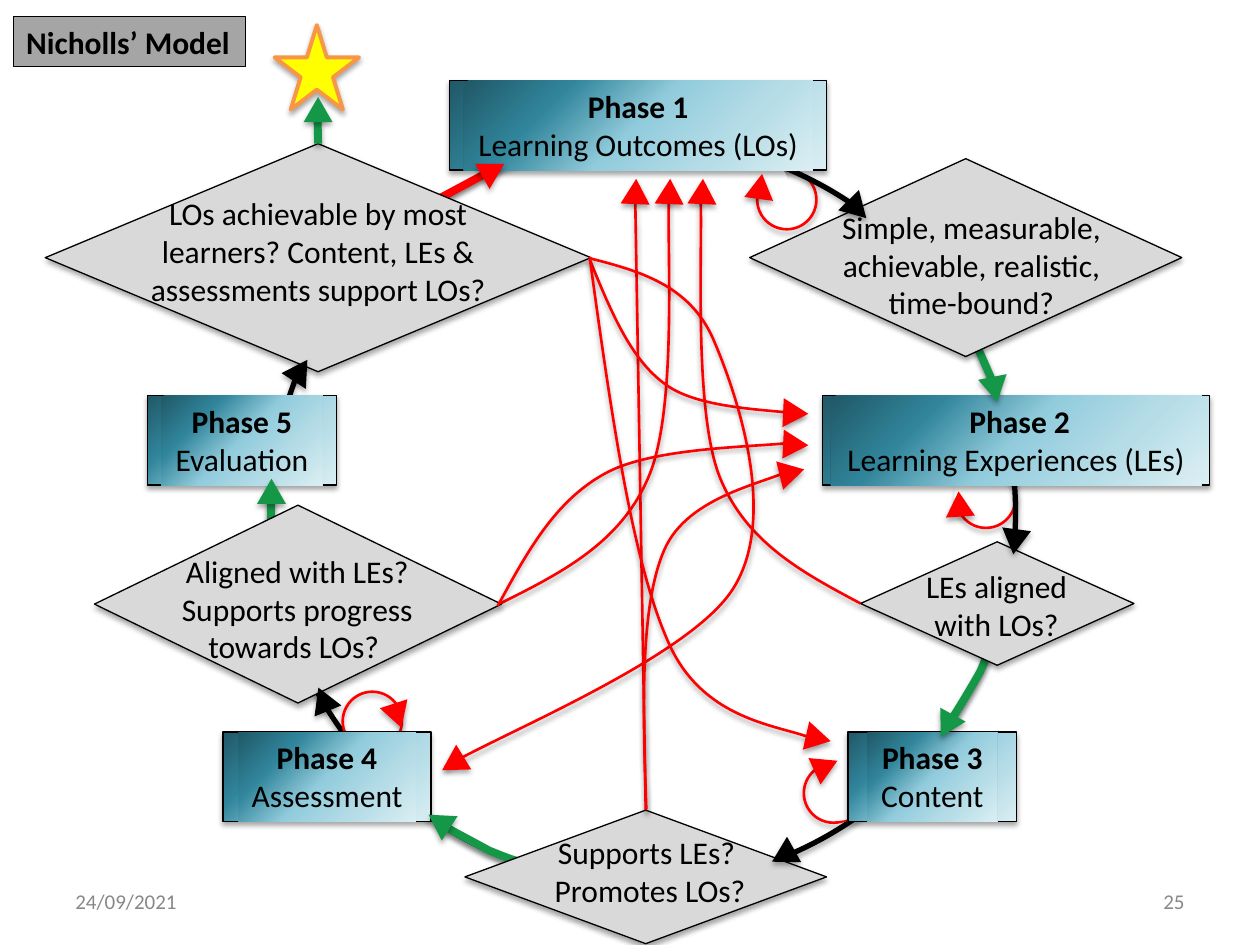
from dataclasses import dataclass
from lxml.etree import SubElement
from pptx import Presentation
from pptx.dml.color import RGBColor
from pptx.enum.shapes import MSO_CONNECTOR, MSO_SHAPE
from pptx.enum.text import MSO_ANCHOR, PP_ALIGN
from pptx.oxml.ns import qn
from pptx.util import Inches, Pt


@dataclass(frozen=True)
class Theme:
    font: str = "Calibri"
    body: int = 18
    foot: int = 12
    black: str = "000000"
    white: str = "FFFFFF"
    red: str = "FF0000"
    green: str = "159748"
    gray: str = "D9D9D9"
    dark: str = "A5A5A5"
    muted: str = "888888"
    star: str = "FFFF00"
    orange: str = "F79646"
    fade: tuple = ("DAEEF3", "B6DDE7", "92CCDC", "31859B", "205867")
    thin: float = 0.75
    curve: float = 1.5
    thick: float = 4.5


T = Theme()


def dress(item, fill=None, line=None, width=T.thin, shade=True):
    """Set fill (a colour, a tuple of gradient colours or None), line and shadow."""
    props = item._element.spPr
    if isinstance(fill, tuple):
        item.fill.background()
        blank = props.find(qn("a:noFill"))
        grad = SubElement(props, qn("a:gradFill"), rotWithShape="1")
        props.replace(blank, grad)
        stops = SubElement(grad, qn("a:gsLst"))
        for i, tone in enumerate(fill):
            stop = SubElement(stops, qn("a:gs"), pos=str(i * 25000))
            SubElement(stop, qn("a:srgbClr"), val=tone)
        way = SubElement(grad, qn("a:path"))
        way.set("path", "circle")
        SubElement(way, qn("a:fillToRect"), l="100000", t="100000")
    elif fill:
        item.fill.solid()
        item.fill.fore_color.rgb = RGBColor.from_string(fill)
    elif hasattr(item, "fill"):
        item.fill.background()
    if line:
        item.line.color.rgb = RGBColor.from_string(line)
        item.line.width = Pt(width)
    else:
        item.line.fill.background()
    effects = SubElement(props, qn("a:effectLst"))
    if shade:
        cast = SubElement(effects, qn("a:outerShdw"), blurRad=str(Pt(3.1)),
                          dist=str(Pt(1.8)), dir="5400000", rotWithShape="0")
        tone = SubElement(cast, qn("a:srgbClr"), val=T.black)
        SubElement(tone, qn("a:alpha"), val="35000")


def write(item, lines, align=PP_ALIGN.CENTER, size=T.body, tone=T.black,
          bold=False, wrap=True, anchor=MSO_ANCHOR.TOP):
    """Write one paragraph a line; bold applies to the first."""
    frame = item.text_frame
    frame.word_wrap = wrap
    frame.vertical_anchor = anchor
    for i, words in enumerate(lines):
        para = frame.add_paragraph() if i else frame.paragraphs[0]
        para.alignment = align
        run = para.add_run()
        run.text = words
        run.font.name = T.font
        run.font.size = Pt(size)
        run.font.bold = bold and i == 0
        run.font.color.rgb = RGBColor.from_string(tone)


deck = Presentation()
deck.slide_width, deck.slide_height = Inches(10), Inches(7.5)
shapes = deck.slides.add_slide(deck.slide_layouts[6]).shapes

# Date and page number
for left, words, align in [(0.5, "24/09/2021", PP_ALIGN.LEFT), (7.17, "25", PP_ALIGN.RIGHT)]:
    box = shapes.add_textbox(Inches(left), Inches(6.95), Inches(2.33), Inches(0.4))
    write(box, [words], align, T.foot, T.muted, anchor=MSO_ANCHOR.MIDDLE)

# Small loops and the main ring, partly hidden by white chords
for left, top, size, tone, width in [
    (7.59, 3.72, 0.47, T.red, T.curve), (6.01, 1.35, 0.47, T.red, T.curve),
    (2.15, 1.11, 5.91, T.black, 3),
    (2.72, 5.49, 0.47, T.red, T.curve), (6.38, 6.06, 0.47, T.red, T.curve),
]:
    ring = shapes.add_shape(MSO_SHAPE.OVAL, Inches(left), Inches(top), Inches(size), Inches(size))
    dress(ring, None, tone, width)
for left, top, wide, turn, end in [
    (6.39, 6.01, 0.58, 277.3, 4.46), (7.53, 3.65, 0.42, 136.9, 4.46), (5.83, 1.25, 0.42, 112.1, 162),
]:
    mask = shapes.add_shape(MSO_SHAPE.CHORD, Inches(left), Inches(top), Inches(wide), Inches(0.43))
    mask.rotation = turn
    mask.adjustments[0], mask.adjustments[1] = 52.95, end
    dress(mask, T.white, shade=False)

# Straight links that run under the diamonds
for x1, y1, x2, y2, tone in [
    (3.44, 1.6, 3.85, 1.38, T.red), (2.15, 4.17, 2.15, 3.95, T.green), (7.76, 2.76, 7.87, 3.01, T.green),
]:
    link = shapes.add_connector(MSO_CONNECTOR.STRAIGHT, Inches(x1), Inches(y1), Inches(x2), Inches(y2))
    dress(link, None, tone, T.thick)

# Decision diamonds, each with its text box
gates = []
for (left, top, wide, high), (tx, ty, tw, th), lines in [
    ((6.83, 4.3, 2.17, 0.98), (7.08, 4.45, 1.66, 0.71), ["LEs aligned with LOs?"]),
    ((3.69, 6.43, 2.87, 1.06), (4.18, 6.56, 1.96, 0.71), ["Supports LEs? ", "Promotes LOs?"]),
    ((5.95, 1.26, 3.43, 1.57), (6.32, 1.6, 2.78, 1.01),
     ["Simple, measurable, achievable, realistic, time-bound?"]),
    ((0.75, 4.01, 3.23, 1.57), (0.96, 4.33, 2.8, 0.98),
     ["Aligned with LEs?", "Supports progress towards LOs? "]),
    ((0.36, 1.14, 4.33, 1.81), (0.84, 1.49, 3.37, 1.01),
     ["LOs achievable by most learners? Content, LEs & assessments support LOs?"]),
]:
    gate = shapes.add_shape(MSO_SHAPE.FLOWCHART_DECISION, Inches(left), Inches(top), Inches(wide), Inches(high))
    dress(gate, T.gray, T.black)
    gates.append(gate)
    write(shapes.add_textbox(Inches(tx), Inches(ty), Inches(tw), Inches(th)), lines)

star = shapes.add_shape(MSO_SHAPE.STAR_5_POINT, Inches(2.18), Inches(0.2), Inches(0.67), Inches(0.67))
dress(star, T.star, T.orange, 2.25)

# Phases: a framed box with a narrower label box centred on it
for left, top, wide, inner, head, words in [
    (1.17, 3.14, 1.5, 1.28, "Phase 5", "Evaluation"),
    (1.77, 5.81, 1.65, 1.41, "Phase 4", "Assessment"),
    (6.73, 5.81, 1.34, 1.03, "Phase 3", "Content"),
    (6.53, 3.14, 3.07, 2.94, " Phase 2", "Learning Experiences (LEs)"),
    (3.57, 0.64, 2.99, 2.77, "Phase 1", "Learning Outcomes (LOs)"),
]:
    for span, line in [(wide, T.black), (inner, None)]:
        box = shapes.add_shape(MSO_SHAPE.RECTANGLE, Inches(left + (wide - span) / 2), Inches(top),
                               Inches(span), Inches(0.71))
        dress(box, T.fade, line, shade=bool(line))
    write(box, [head, words], bold=True, wrap=False)

# Links that leave the top of a diamond
for gate, x, y, tone, width in [(gates[4], 2.52, 0.91, T.green, T.thick), (gates[1], 5.04, 1.48, T.red, T.curve)]:
    link = shapes.add_connector(MSO_CONNECTOR.STRAIGHT, 0, 0, Inches(x), Inches(y))
    link.begin_connect(gate, 0)
    dress(link, None, tone, width)

# Curves: a start point, then Bezier pieces of two handles and an end
for tone, curves in {
    T.green: [
        [(4.13, 6.84), (4.05, 6.82), (3.98, 6.79), (3.88, 6.75), (3.79, 6.7), (3.6, 6.6), (3.55, 6.57)],
        [(7.85, 5.13), (7.84, 5.18), (7.82, 5.24), (7.78, 5.33), (7.73, 5.42), (7.61, 5.62), (7.57, 5.68)],
    ],
    T.red: [
        [(6.83, 4.79), (6.38, 4.55), (5.92, 4.31), (5.71, 3.78), (5.5, 3.24), (5.58, 1.93), (5.56, 1.56)],
        [(3.97, 4.79), (4.45, 4.55), (4.93, 4.31), (5.15, 3.78), (5.38, 3.24), (5.29, 1.93), (5.31, 1.56)],
        [(4.68, 2.06), (4.84, 2.45), (5, 2.85), (5.28, 3.05), (5.56, 3.26), (6.18, 3.25), (6.36, 3.29)],
        [(4.68, 2.05), (5.07, 2.15), (5.47, 2.26), (5.66, 2.69), (5.85, 3.13), (6.18, 4.1), (5.82, 4.67),
         (5.47, 5.23), (3.91, 5.85), (3.53, 6.09)],
        [(3.95, 4.81), (4.18, 4.39), (4.4, 3.98), (4.8, 3.76), (5.19, 3.54), (6.06, 3.55), (6.31, 3.51)],
        [(4.68, 2.04), (4.85, 3.27), (5.02, 4.49), (5.32, 5.13), (5.62, 5.77), (6.29, 5.76), (6.48, 5.88)],
        [(5.13, 6.42), (5.1, 5.62), (5.08, 4.81), (5.27, 4.37), (5.46, 3.92), (6.12, 3.83), (6.29, 3.72)],
    ],
}.items():
    for knots in curves:
        dots = [(Inches(x), Inches(y)) for x, y in knots]
        pen = shapes.build_freeform(*dots[0])
        pen.add_line_segments(dots[1:], close=False)
        bend = pen.convert_to_shape()
        # Each three line steps become one Bezier piece
        steps = list(bend._element.iter(qn("a:lnTo")))
        track = steps[0].getparent()
        for i in range(0, len(steps), 3):
            piece = SubElement(track, qn("a:cubicBezTo"))
            for step in steps[i:i + 3]:
                piece.append(step[0])
                track.remove(step)
        dress(bend, None, tone, T.thick if tone == T.green else T.curve)
        if tone == T.green:  # under the diamonds
            gates[0]._element.addprevious(bend._element)

# Arrow tips: left, top, turn
for tone, tips in {
    T.black: [(6.1, 6.69, 240.9), (6.69, 1.56, 135.4), (7.94, 4.2, 187.5), (2.45, 5.45, 337.7),
              (2.27, 2.84, 32.9)],
    T.green: [(7.78, 2.99, 168.8), (7.4, 5.66, 208.7), (3.37, 6.42, 302.9), (2.04, 3.8, 0), (2.41, 0.77, 0)],
    T.red: [(3.04, 5.58, 162), (6.44, 5.98, 65.4), (7.5, 3.9, 355.9), (3.8, 1.25, 60.2), (5.92, 1.38, 7.7),
            (4.93, 1.42, 2.5), (5.2, 1.42, 2.5), (5.46, 1.42, 2.5), (6.2, 3.18, 92.6), (3.48, 5.96, 238.7),
            (6.2, 3.43, 92.8), (6.38, 5.76, 102.7), (6.17, 3.65, 76)],
}.items():
    for left, top, turn in tips:
        tip = shapes.add_shape(MSO_SHAPE.ISOSCELES_TRIANGLE, Inches(left), Inches(top), Inches(0.23), Inches(0.2))
        tip.rotation = turn
        dress(tip, tone)

title = shapes.add_shape(MSO_SHAPE.RECTANGLE, Inches(0.11), Inches(0.13), Inches(1.84), Inches(0.4))
dress(title, T.dark, T.black, shade=False)
write(title, ["Nicholls’ Model"], PP_ALIGN.LEFT, bold=True, wrap=False)

deck.save("out.pptx")
